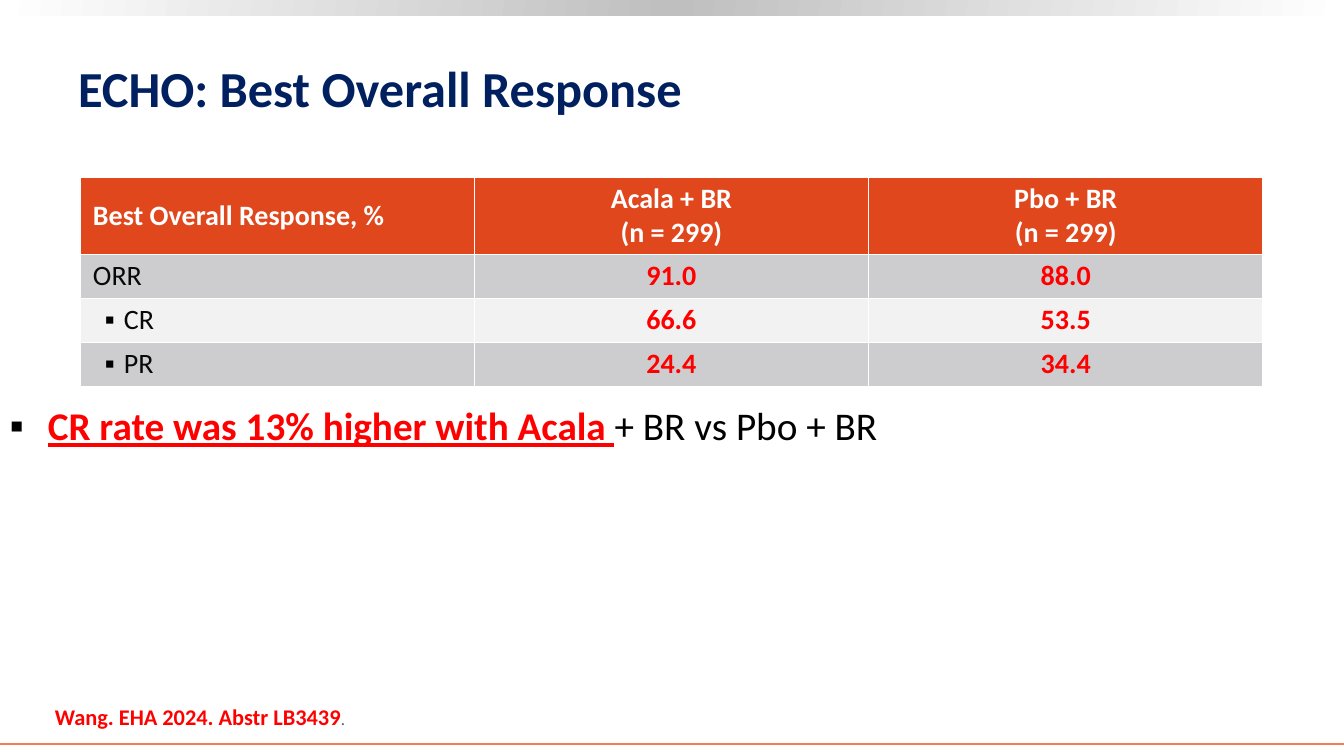
from copy import deepcopy

from lxml.etree import SubElement
from pptx import Presentation
from pptx.dml.color import RGBColor
from pptx.enum.shapes import MSO_CONNECTOR as Connector, MSO_SHAPE as Shape
from pptx.enum.text import MSO_ANCHOR as Anchor, MSO_AUTO_SIZE as AutoSize, PP_ALIGN as Align
from pptx.oxml.ns import qn
from pptx.util import Pt

PX = 914400 / 100.8
WIDTH, HEIGHT = 1344, 756

BLACK, WHITE, RED = "000000", "FFFFFF", "FF0000"
NAVY, ORANGE, CORAL = "002060", "E1471D", "F47D55"
INK, SLATE, SILVER = "07080A", "455560", "BFBFBF"
BAND_DARK, BAND_LIGHT = "CDCDCF", "F2F2F2"

RESPONSES = [
    ("Best Overall Response, %", "Acala + BR\n(n = 299)", "Pbo + BR\n(n = 299)"),
    ("ORR", "91.0", "88.0"),
    ("CR", "66.6", "53.5"),
    ("PR", "24.4", "34.4"),
]
SUBRESPONSES = ("CR", "PR")


def px(length):
    return round(length * PX)


def rgb(value):
    return RGBColor.from_string(value)


def style(font, size, color, bold=False, underline=False):
    font.name = "Calibri"
    font.size = Pt(size)
    font.color.rgb = rgb(color)
    font.bold = bold
    font.underline = underline


def add_run(paragraph, text, *look):
    run = paragraph.add_run()
    run.text = text
    style(run.font, *look)


def add_bullet(paragraph, margin, hanging):
    """Give the paragraph a square black bullet with a hanging indent."""
    properties = paragraph._p.get_or_add_pPr()
    properties.set("marL", str(px(margin)))
    properties.set("indent", str(-px(hanging)))
    color = SubElement(properties, qn("a:buClr"))
    SubElement(color, qn("a:srgbClr")).set("val", BLACK)
    SubElement(properties, qn("a:buFont")).set("typeface", "Calibri")
    SubElement(properties, qn("a:buChar")).set("char", "▪")


def add_text_frame(slide, box, anchor):
    frame = slide.shapes.add_textbox(*map(px, box)).text_frame
    frame.word_wrap = True
    frame.vertical_anchor = anchor
    return frame


def add_top_band(slide, box):
    band = slide.shapes.add_shape(Shape.RECTANGLE, *map(px, box))
    band.shadow.inherit = False
    band.line.fill.background()
    band.fill.gradient()
    band.fill.gradient_angle = 170
    first_stop = next(band._element.spPr.iter(qn("a:gs")))
    first_stop.addnext(deepcopy(first_stop))
    for stop, position, color in zip(band.fill.gradient_stops, (0, 0.5, 1), (WHITE, SILVER, WHITE)):
        stop.position = position
        stop.color.rgb = rgb(color)


def add_bottom_rule(slide, y):
    rule = slide.shapes.add_connector(Connector.STRAIGHT, 0, px(y), px(WIDTH), px(y))
    rule.line.color.rgb = rgb(CORAL)
    rule.line.width = Pt(1.5)
    SubElement(rule._element.spPr, qn("a:effectLst"))


def set_title(slide, box):
    title = slide.shapes.title
    title.left, title.top, title.width, title.height = map(px, box)
    frame = title.text_frame
    frame.text = "ECHO: Best Overall Response"
    frame.auto_size = AutoSize.NONE
    frame.vertical_anchor = Anchor.MIDDLE
    heading = frame.paragraphs[0]
    heading.alignment = Align.LEFT
    style(heading.runs[0].font, 36, NAVY, True)


def fill_cell(cell, text, row, column):
    cell.fill.solid()
    cell.fill.fore_color.rgb = rgb(ORANGE if row == 0 else BAND_DARK if row % 2 else BAND_LIGHT)
    cell.margin_left = cell.margin_right = px(13)
    cell.margin_top = cell.margin_bottom = px(5)
    cell.vertical_anchor = Anchor.MIDDLE
    cell.text_frame.text = text
    color = WHITE if row == 0 else RED if column else INK
    for paragraph in cell.text_frame.paragraphs:
        paragraph.alignment = Align.CENTER if column else Align.LEFT
        if text in SUBRESPONSES:
            add_bullet(paragraph, 31, 19)
        style(paragraph.runs[0].font, 20, color, row == 0 or column > 0)


def add_response_table(slide, box):
    rows, columns = len(RESPONSES), len(RESPONSES[0])
    table = slide.shapes.add_table(rows, columns, *map(px, box)).table
    row_height = 44
    for column in table.columns:
        column.width = px(box[2] / columns)
    for row in table.rows:
        row.height = px(row_height)
    table.rows[0].height = px(box[3] - row_height * (rows - 1))
    for r, response in enumerate(RESPONSES):
        for c, text in enumerate(response):
            fill_cell(table.cell(r, c), text, r, c)


def add_finding(slide, box):
    finding = add_text_frame(slide, box, Anchor.TOP).paragraphs[0]
    add_bullet(finding, 38, 38)
    finding.line_spacing = 0.9
    add_run(finding, "CR rate was 13% higher with Acala ", 28, RED, True, True)
    add_run(finding, "+ BR vs Pbo + BR", 28, BLACK)


def add_citation(slide, box):
    citation = add_text_frame(slide, box, Anchor.BOTTOM).paragraphs[0]
    add_run(citation, "Wang. EHA 2024. Abstr LB3439", 16, RED, True)
    add_run(citation, ".", 12, SLATE)


def main():
    deck = Presentation()
    deck.slide_width, deck.slide_height = px(WIDTH), px(HEIGHT)
    slide = deck.slides.add_slide(deck.slide_layouts.get_by_name("Title Only"))
    add_top_band(slide, (0, 0, WIDTH, 16))
    add_bottom_rule(slide, 744)
    set_title(slide, (68, 26, 1228, 122))
    add_finding(slide, (0, 402, 1200, 278))
    add_citation(slide, (45, 698, 866, 37))
    add_response_table(slide, (80, 177, 1183, 209))
    deck.save("out.pptx")


if __name__ == "__main__":
    main()
